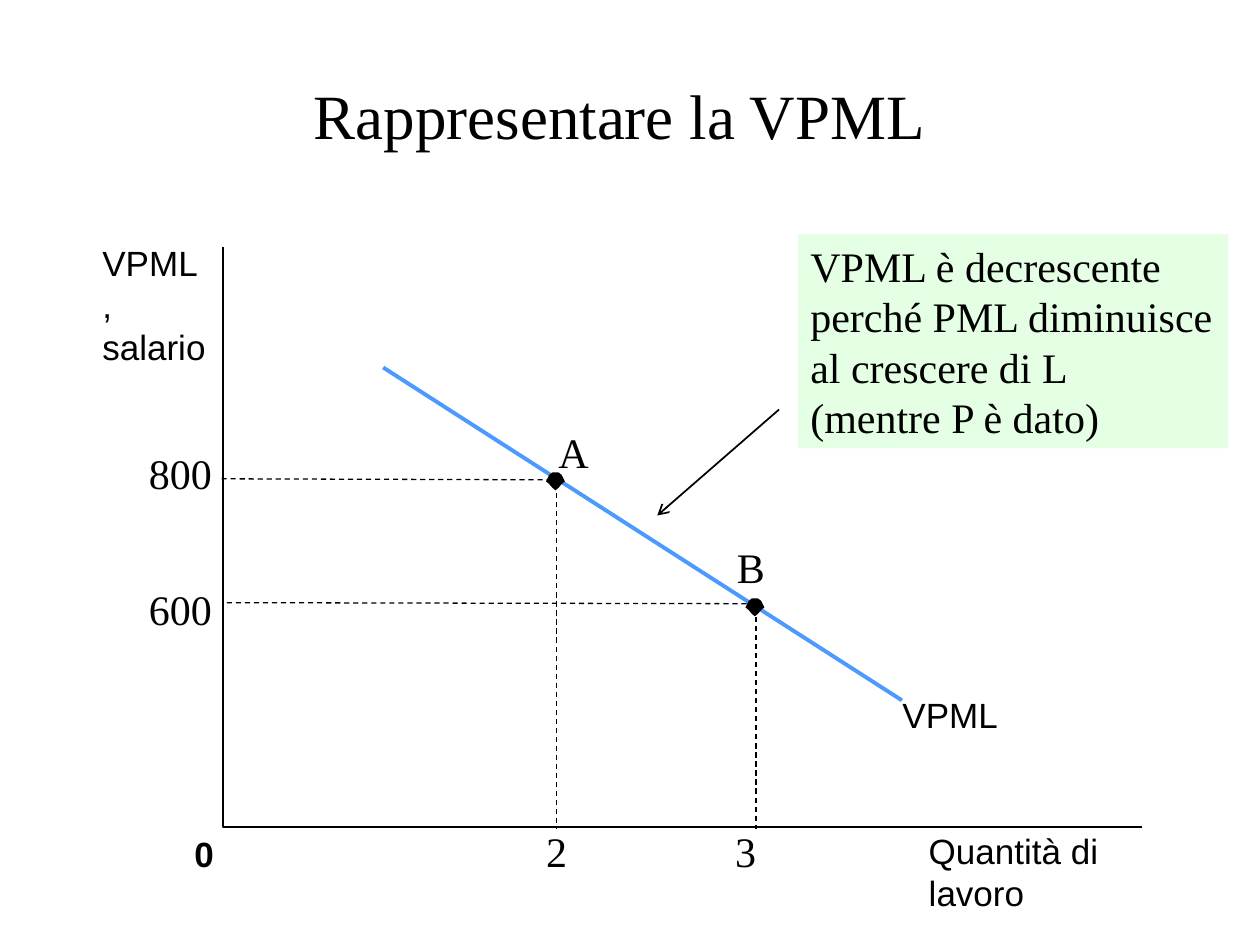
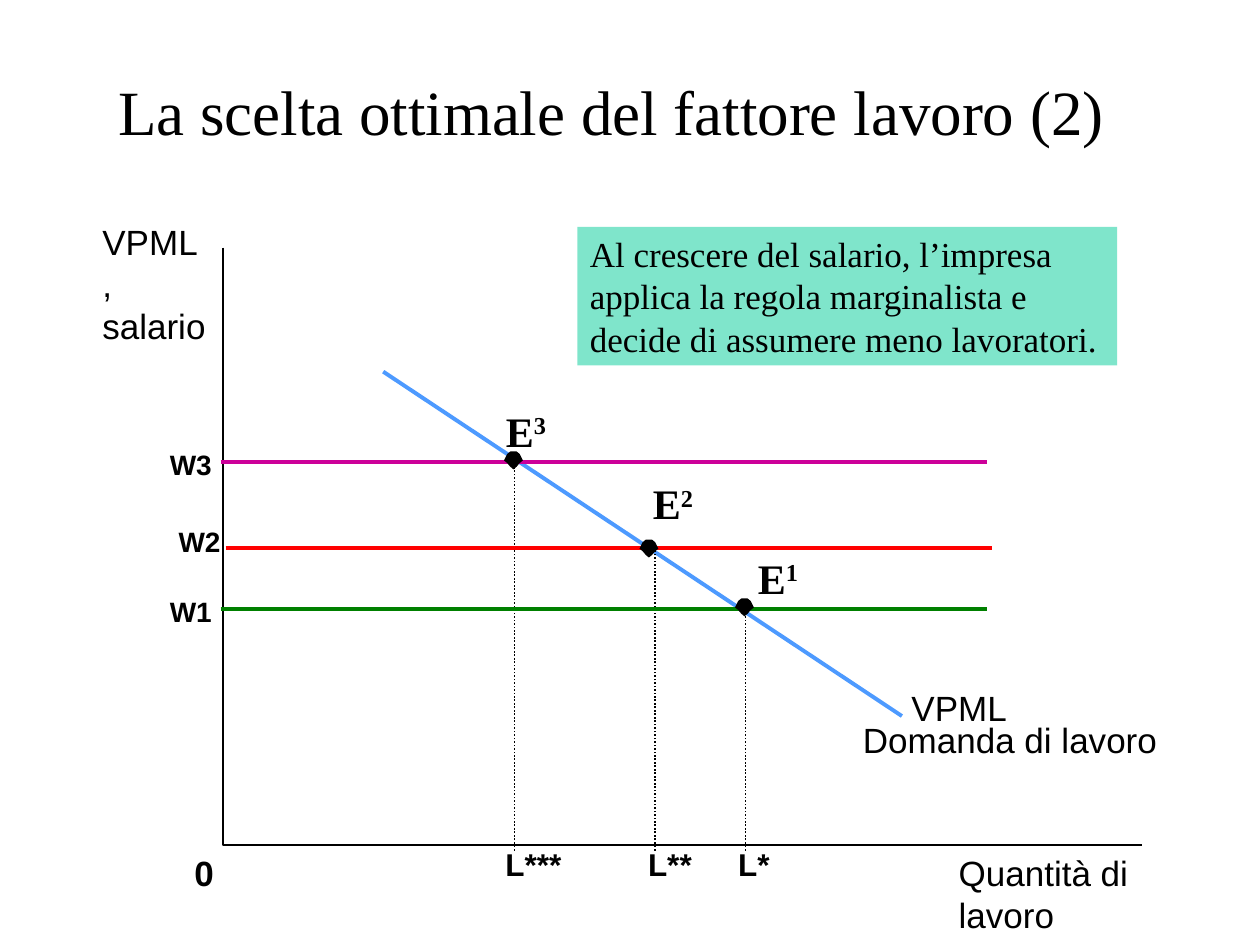
from lxml.etree import SubElement
from pptx import Presentation
from pptx.dml.color import RGBColor
from pptx.enum.dml import MSO_LINE as Dash
from pptx.enum.shapes import MSO_CONNECTOR as Connector, MSO_SHAPE as Preset
from pptx.enum.text import MSO_ANCHOR as Anchor, PP_ALIGN as Align
from pptx.oxml.ns import qn
from pptx.util import Inches, Pt

SERIF = "Times New Roman"
SANS = "Arial"
BLACK = "000000"
CURVE_BLUE = "4D9AFF"
TITLE_ONLY = 5
CELLS_PER_INCH = 12
AXIS_LEFT, AXIS_RIGHT = 21.25, 108.75
DOT_OUTLINE = [(0.9, 1.7), (1.2, 1.45), (1.5, 1.1), (1.8, 0.85), (1.5, 0.25), (1.2, 0),
               (0.6, 0), (0.3, 0.25), (0, 0.85), (0.3, 1.1), (0.6, 1.45)]


def cells(*counts):
    return [Inches(count / CELLS_PER_INCH) for count in counts]


def color(hex_code):
    return RGBColor.from_string(hex_code)


def style_font(font, size, name, bold=False):
    font.size, font.name, font.bold = Pt(size), name, bold
    font.color.rgb = color(BLACK)


def write_lines(frame, lines, size, name, bold=False, align=Align.LEFT, spacing=None):
    for index, line in enumerate(lines):
        para = frame.paragraphs[0] if index == 0 else frame.add_paragraph()
        para.text = line
        para.alignment = align
        para.line_spacing = spacing
        style_font(para.font, size, name, bold)


def add_page(deck, title, top, height):
    page = deck.slides.add_slide(deck.slide_layouts[TITLE_ONLY])
    box = page.shapes.title
    box.left, box.top, box.width, box.height = cells(8, top, 102, height)
    box.text_frame.vertical_anchor = Anchor.MIDDLE
    write_lines(box.text_frame, [title], 36, SERIF, align=Align.CENTER)
    return page


def add_label(page, area, lines, size=24, name=SERIF, padded=True, wrap=False, **style):
    box = page.shapes.add_textbox(*cells(*area))
    frame = box.text_frame
    frame.word_wrap = wrap
    if not padded:
        frame.margin_left = frame.margin_right = 0
        frame.margin_top = frame.margin_bottom = 0
    write_lines(frame, lines, size, name, **style)
    return box


def add_sans_label(page, area, lines, size=20, wrap=True, **style):
    return add_label(page, area, lines, size, SANS, padded=False, wrap=wrap, **style)


def add_point_name(page, left, top, letter, index):
    box = add_label(page, (left, top, 6.4, 6), [letter], bold=True)
    para = box.text_frame.paragraphs[0]
    span = para.add_run()
    span.text = index
    span._r.get_or_add_rPr().set("baseline", "30000")


def add_line(page, start, end, hex_code=BLACK, width=0.75, dash=None, arrow=False):
    line = page.shapes.add_connector(Connector.STRAIGHT, *cells(*start, *end))
    line.line.color.rgb = color(hex_code)
    line.line.width = Pt(width)
    if dash:
        line.line.dash_style = dash
    properties = line.element.spPr
    SubElement(properties, qn("a:effectLst"))
    if arrow:
        SubElement(properties.find(qn("a:ln")), qn("a:tailEnd"), type="arrow")


def add_outline(page, points, closed):
    start, *others = [cells(*point) for point in points]
    builder = page.shapes.build_freeform(*start, scale=1.0)
    builder.add_line_segments(others, close=closed)
    outline = builder.convert_to_shape()
    outline.shadow.inherit = False
    return outline


def add_axes(page, top, bottom):
    corners = [(AXIS_LEFT, top), (AXIS_LEFT, bottom), (AXIS_RIGHT, bottom)]
    axes = add_outline(page, corners, closed=False)
    axes.fill.background()
    axes.line.color.rgb = color(BLACK)
    axes.line.width = Pt(1)


def add_dot(page, left, top):
    dot = add_outline(page, [(left + x, top + y) for x, y in DOT_OUTLINE], closed=True)
    dot.fill.solid()
    dot.fill.fore_color.rgb = color(BLACK)
    dot.line.fill.background()


def add_note(page, area, hex_code, lines, size):
    note = page.shapes.add_shape(Preset.RECTANGLE, *cells(*area))
    note.shadow.inherit = False
    note.fill.solid()
    note.fill.fore_color.rgb = color(hex_code)
    fill_color = note.element.spPr.find(qn("a:solidFill")).find(qn("a:srgbClr"))
    SubElement(fill_color, qn("a:alpha"), val="50000")
    note.line.fill.background()
    note.text_frame.word_wrap = True
    note.text_frame.vertical_anchor = Anchor.TOP
    write_lines(note.text_frame, lines, size, SERIF)


def add_axis_names(page, salary_top, labor_left, labor_top, zero_top):
    add_sans_label(page, (9.75, salary_top, 9.96, 8), ["VPML,", "salario"])
    add_sans_label(page, (labor_left, labor_top, 26, 4), ["Quantità di lavoro"])
    add_sans_label(page, (18.5, zero_top, 1.8, 4), ["0"], wrap=False, bold=True)


def build_curve_page(deck):
    page = add_page(deck, "Rappresentare la VPML", 3.35, 15)
    add_axis_names(page, 23, 88.45, 79, 79.3)
    add_sans_label(page, (62, 66, 57, 8), ["VPML"], align=Align.CENTER)
    add_line(page, (36.5, 35), (85.9, 66.7), CURVE_BLUE, 2.25)
    add_axes(page, 23.5, 78.75)
    add_note(page, (76, 22.3, 41, 20.4), "CCFFCC",
             ["VPML è decrescente perché PML diminuisce al crescere di L",
              "(mentre P è dato)"], 24)
    add_line(page, (74.2, 39), (62.6, 49.1), width=1, arrow=True)

    points = [("A", "2", "800", 53, 45.7, 21.1, 42, (52, 45), (52, 40), 34),
              ("B", "3", "600", 72, 57.5, 21.6, 55, (71, 57), (69, 51), 52)]
    for name, labor, value, x, y, guide_left, value_top, dot, name_at, labor_left in points:
        add_line(page, (guide_left, y - 0.1), (x, y), dash=Dash.DASH)
        add_line(page, (x, y + 0.4), (x, 79), dash=Dash.DASH)
        add_label(page, (13, value_top, 8.4, 6), [value])
        add_label(page, (labor_left, 78, 38, 6), [labor], align=Align.CENTER)
        add_dot(page, *dot)
        add_label(page, (*name_at, 5.2, 6), [name])


def build_choice_page(deck):
    page = add_page(deck, "La scelta ottimale del fattore lavoro (2) ", 4, 13)
    add_axis_names(page, 21, 91.3, 81.1, 81.1)
    add_sans_label(page, (70.1, 65.4, 42.5, 4), ["VPML"], align=Align.CENTER)
    add_line(page, (36.5, 35.4), (85.9, 68.2), CURVE_BLUE, 2.25)
    add_axes(page, 23.6, 80.5)

    add_label(page, (15, 42, 6.4, 4.4), ["W3"], 16, SANS, bold=True)
    add_sans_label(page, (17, 50, 4, 6), ["W2"], 16, wrap=False, bold=True, align=Align.RIGHT)
    add_label(page, (15, 56, 6.4, 4.4), ["W1"], 16, SANS, bold=True)

    levels = [("3", "L***", "CC0099", 21, 49, 44, (48, 43), (47, 38), 48),
              ("2", "L**", "FF0000", 21.5, 62.4, 52.2, (60.9, 51.4), (61, 44.9), 61),
              ("1", "L*", "008000", 21, 71, 58, (70, 57), (71, 52), 69)]
    for index, labor, hue, left, x, y, dot, name_at, labor_left in levels:
        add_line(page, (left, y), (left + 73, y), hue, 2.25)
        add_line(page, (x, 81), (x, y), width=1, dash=Dash.ROUND_DOT)
        add_sans_label(page, (labor_left, 81, 5.6, 3.4), [labor], 18, wrap=False,
                       bold=True, align=Align.CENTER, spacing=0.85)
        add_dot(page, *dot)
        add_point_name(page, *name_at, "E", index)

    add_note(page, (55, 21.6, 51.4, 13.2), "00CC99",
             ["Al crescere del salario, l’impresa",
              "applica la regola marginalista e",
              "decide di assumere meno lavoratori."], 20)
    add_label(page, (81, 67.8, 35.4, 5.3), ["Domanda di lavoro"], 20, SANS, wrap=True)


def main():
    deck = Presentation()
    deck.slide_width, deck.slide_height = Inches(10), Inches(7.5)
    build_curve_page(deck)
    build_choice_page(deck)
    deck.save("out.pptx")


if __name__ == "__main__":
    main()
